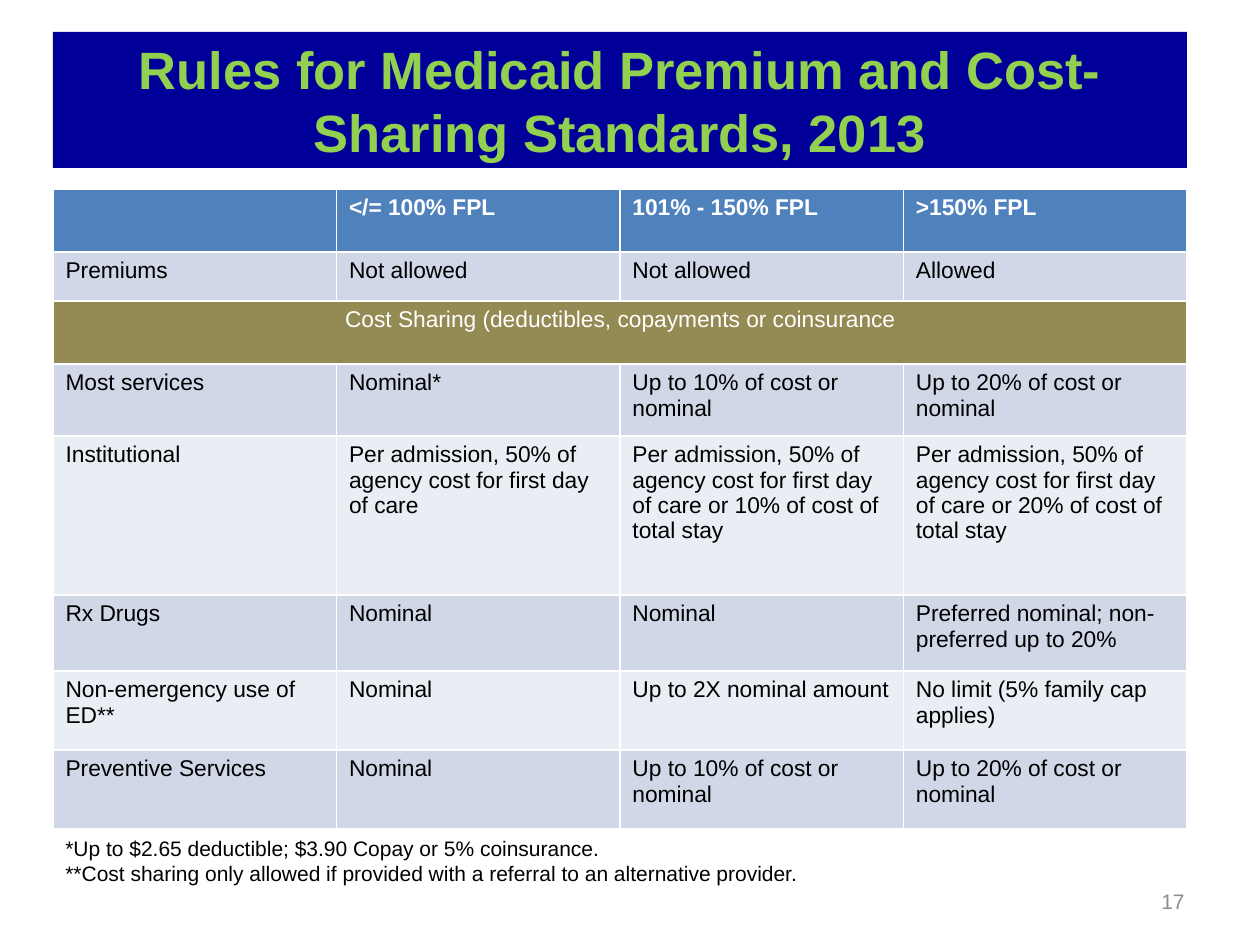
"""Build a slide with the Medicaid premium and cost-sharing table."""
from pptx import Presentation
from pptx import util as u
from pptx.dml.color import RGBColor
from pptx.enum import text

PX = 914400 // 126
NAVY = RGBColor(0x00, 0x00, 0x99)
GREEN = RGBColor(0x92, 0xD0, 0x50)
BLUE = RGBColor(0x4F, 0x81, 0xBD)
OLIVE = RGBColor(0x94, 0x8A, 0x54)
BAND_DARK = RGBColor(0xD0, 0xD8, 0xE8)
BAND_LIGHT = RGBColor(0xE9, 0xED, 0xF4)
GRAY = RGBColor(0x8C, 0x8C, 0x8C)
WHITE = RGBColor(0xFF, 0xFF, 0xFF)
BLACK = RGBColor(0x00, 0x00, 0x00)

TITLE = "Rules for Medicaid Premium and Cost-Sharing Standards, 2013"
ROWS = [
    (63, ["", "</= 100% FPL", "101% - 150% FPL", ">150% FPL"]),
    (49, ["Premiums", "Not allowed", "Not allowed", "Allowed"]),
    (63, ["Cost Sharing (deductibles, copayments or coinsurance"]),
    (72, ["Most services", "Nominal*", "Up to 10% of cost or nominal",
          "Up to 20% of cost or nominal"]),
    (159, ["Institutional",
           "Per admission, 50% of agency cost for first day of care",
           "Per admission, 50% of agency cost for first day of care or 10% of cost of total stay",
           "Per admission, 50% of agency cost for first day of care or 20% of cost of total stay"]),
    (76, ["Rx Drugs", "Nominal", "Nominal", "Preferred nominal; non-preferred up to 20%"]),
    (79, ["Non-emergency use of ED**", "Nominal", "Up to 2X nominal amount",
          "No limit (5% family cap applies)"]),
    (79, ["Preventive Services", "Nominal", "Up to 10% of cost or nominal",
          "Up to 20% of cost or nominal"]),
]
NOTES = [
    "*Up to $2.65 deductible; $3.90 Copay or 5% coinsurance.",
    "**Cost sharing only allowed if provided with a referral to an alternative provider.",
]
SLIDE_NUMBER = "17"
LEFT, WIDTH, COLUMNS = 53, 1134, 4
TABLE_TOP = 189


def px(*lengths):
    return [u.Emu(length * PX) for length in lengths]


def write(frame, *lines, size=13, color=BLACK, bold=False,
          align=text.PP_ALIGN.LEFT, anchor=text.MSO_ANCHOR.TOP):
    frame.word_wrap = True
    frame.vertical_anchor = anchor
    for index, line in enumerate(lines):
        paragraph = frame.add_paragraph() if index else frame.paragraphs[0]
        paragraph.alignment = align
        run = paragraph.add_run()
        run.text = line
        font = run.font
        font.name, font.size, font.bold = "Arial", u.Pt(size), bold
        font.color.rgb = color


def add_title(slide):
    title = slide.shapes.title
    title.left, title.top, title.width, title.height = px(LEFT, 32, WIDTH, 136)
    title.fill.solid()
    title.fill.fore_color.rgb = NAVY
    title.text_frame.auto_size = text.MSO_AUTO_SIZE.NONE
    write(title.text_frame, TITLE, size=30, color=GREEN, bold=True,
          align=text.PP_ALIGN.CENTER, anchor=text.MSO_ANCHOR.MIDDLE)


def add_rules_table(slide):
    height = sum(row_height for row_height, _ in ROWS)
    table = slide.shapes.add_table(
        len(ROWS), COLUMNS, *px(LEFT, TABLE_TOP, WIDTH, height)).table
    for row_index, (row_height, labels) in enumerate(ROWS):
        table.rows[row_index].height = px(row_height)[0]
        header, section = row_index == 0, len(labels) == 1
        band = BAND_DARK if row_index % 2 else BAND_LIGHT
        fill = BLUE if header else OLIVE if section else band
        for cell in table.rows[row_index].cells:
            cell.fill.solid()
            cell.fill.fore_color.rgb = fill
        if section:
            table.cell(row_index, 0).merge(table.cell(row_index, COLUMNS - 1))
        for column, label in enumerate(labels):
            if label:
                write(table.cell(row_index, column).text_frame, label, bold=header,
                      color=WHITE if header or section else BLACK,
                      align=text.PP_ALIGN.CENTER if section else text.PP_ALIGN.LEFT)
    return TABLE_TOP + height


def main():
    presentation = Presentation()
    presentation.slide_width, presentation.slide_height = px(1260, 945)
    slide = presentation.slides.add_slide(presentation.slide_layouts[5])
    add_title(slide)
    table_bottom = add_rules_table(slide)
    notes = slide.shapes.add_textbox(*px(LEFT, table_bottom, 809, 63))
    write(notes.text_frame, *NOTES, size=12)
    number = slide.shapes.add_textbox(*px(903, 876, 294, 50))
    write(number.text_frame, SLIDE_NUMBER, size=12, color=GRAY,
          align=text.PP_ALIGN.RIGHT, anchor=text.MSO_ANCHOR.MIDDLE)
    presentation.save("out.pptx")


if __name__ == "__main__":
    main()
